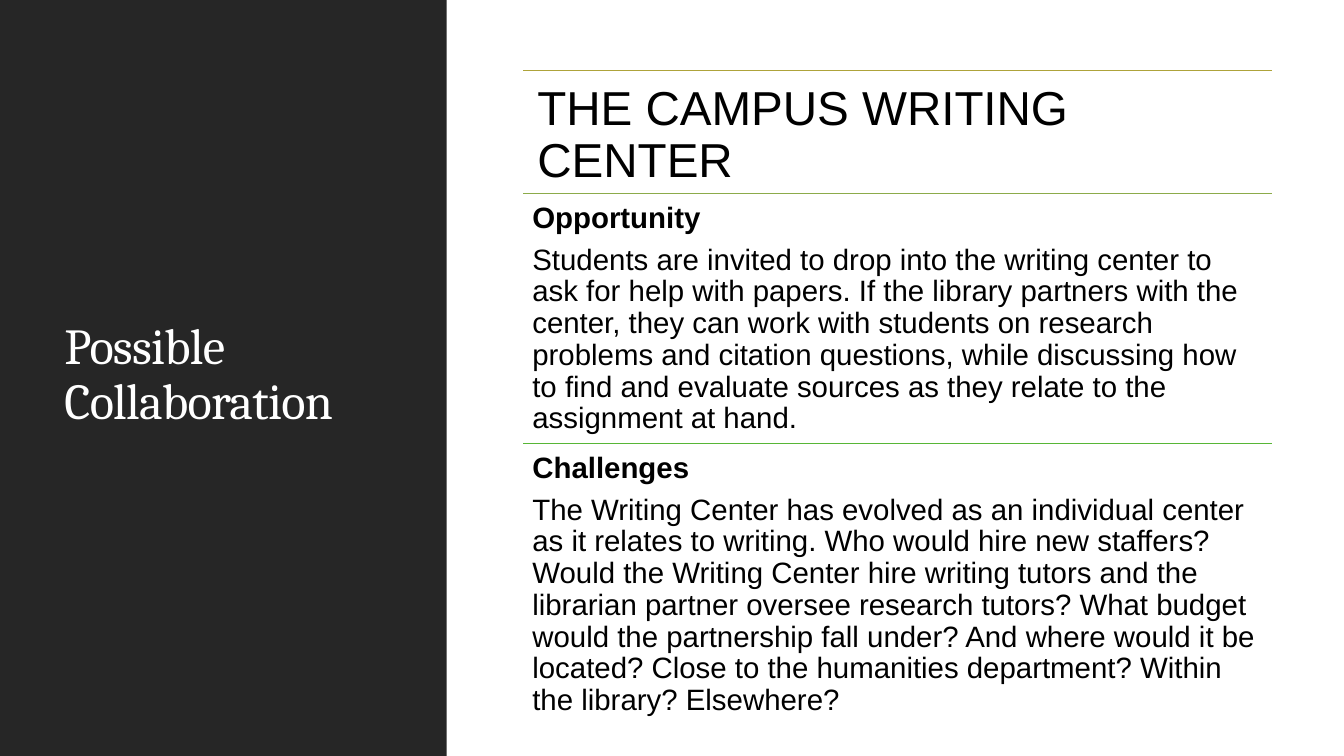
import pptx
import pptx.util
import pptx.dml.color
import pptx.enum.shapes
import pptx.enum.text
import pptx.oxml.ns
from lxml import etree

Inches = pptx.util.Inches
Pt = pptx.util.Pt
RGBColor = pptx.dml.color.RGBColor

CHARCOAL = RGBColor(0x26, 0x26, 0x26)
WHITE = RGBColor(0xFF, 0xFF, 0xFF)
BLACK = RGBColor(0x00, 0x00, 0x00)
GOLD = RGBColor(0xAE, 0xA3, 0x3A)
OLIVE = RGBColor(0x8C, 0xAB, 0x4A)
GREEN = RGBColor(0x57, 0xB6, 0x36)

COLUMN_LEFT, COLUMN_WIDTH = 5.19, 7.43

TITLE_FONT = {"name": "Cambria", "size": Pt(36)}
HEADING_FONT = {"name": "Arial", "size": Pt(34)}
LABEL_FONT = {"name": "Arial", "size": Pt(21), "bold": True}
BODY_FONT = {"name": "Arial", "size": Pt(21), "bold": False}

# Top, height, rule colour, text inset, paragraphs
SECTIONS = [
    (0.7, 1.22, GOLD, 0.14, [("THE CAMPUS WRITING CENTER", HEADING_FONT)]),
    (1.92, 2.48, OLIVE, 0.09, [
        ("Opportunity", LABEL_FONT),
        ("Students are invited to drop into the writing center to ask for help "
         "with papers. If the library partners with the center, they can work "
         "with students on research problems and citation questions, while "
         "discussing how to find and evaluate sources as they relate to the "
         "assignment at hand.", BODY_FONT),
    ]),
    (4.4, 2.48, GREEN, 0.09, [
        ("Challenges", LABEL_FONT),
        ("The Writing Center has evolved as an individual center as it relates "
         "to writing. Who would hire new staffers? Would the Writing Center "
         "hire writing tutors and the librarian partner oversee research "
         "tutors? What budget would the partnership fall under? And where "
         "would it be located? Close to the humanities department? Within the "
         "library? Elsewhere?", BODY_FONT),
    ]),
]


def set_attributes(target, values):
    for name, value in values.items():
        setattr(target, name, value)


def add_panel(s, left, top, width, height, color):
    sp = s.shapes.add_shape(pptx.enum.shapes.MSO_SHAPE.RECTANGLE, Inches(left),
                            Inches(top), Inches(width), Inches(height))
    sp.shadow.inherit = False
    sp.fill.solid()
    sp.fill.fore_color.rgb = color
    sp.line.fill.background()


def add_rule(s, top, color):
    y = Inches(top)
    line = s.shapes.add_connector(
        pptx.enum.shapes.MSO_CONNECTOR.STRAIGHT, Inches(COLUMN_LEFT), y,
        Inches(COLUMN_LEFT + COLUMN_WIDTH), y)
    line.line.color.rgb = color
    line.line.width = Pt(1.25)
    etree.SubElement(line._element.spPr, pptx.oxml.ns.qn("a:effectLst"))


def add_text(s, left, top, width, height, paragraphs, color, inset_x, inset_y,
             anchor=pptx.enum.text.MSO_ANCHOR.TOP):
    box = s.shapes.add_textbox(Inches(left), Inches(top), Inches(width), Inches(height))
    tf = box.text_frame
    set_attributes(tf, {
        "word_wrap": True, "vertical_anchor": anchor,
        "margin_left": Inches(inset_x), "margin_right": Inches(inset_x),
        "margin_top": Inches(inset_y), "margin_bottom": Inches(inset_y),
    })
    for i, (text, font) in enumerate(paragraphs):
        p = tf.add_paragraph() if i else tf.paragraphs[0]
        set_attributes(p, {"line_spacing": 0.9, "space_after": int(font["size"] * 0.35)})
        r = p.add_run()
        r.text = text
        set_attributes(r.font, font)
        r.font.color.rgb = color
    return tf


def add_title(s):
    tf = add_text(s, 0.54, 0.57, 3.37, 6.31, [("Possible Collaboration", TITLE_FONT)],
                  WHITE, 0.1, 0.05, pptx.enum.text.MSO_ANCHOR.MIDDLE)
    p = tf.paragraphs[0]
    p.space_after = Pt(0)
    # Slightly tightened letter spacing
    p.runs[0].font._element.set("spc", "-50")


def main():
    prs = pptx.Presentation()
    prs.slide_width, prs.slide_height = Inches(13.33), Inches(7.5)
    s = prs.slides.add_slide(prs.slide_layouts[6])

    # Dark title panel
    add_panel(s, 0, 0, 4.43, 7.5, CHARCOAL)
    add_title(s)

    # Ruled sections
    for top, height, color, inset, paragraphs in SECTIONS:
        add_rule(s, top, color)
        add_text(s, COLUMN_LEFT, top, COLUMN_WIDTH, height, paragraphs, BLACK, inset, inset)

    prs.save("out.pptx")


if __name__ == "__main__":
    main()
